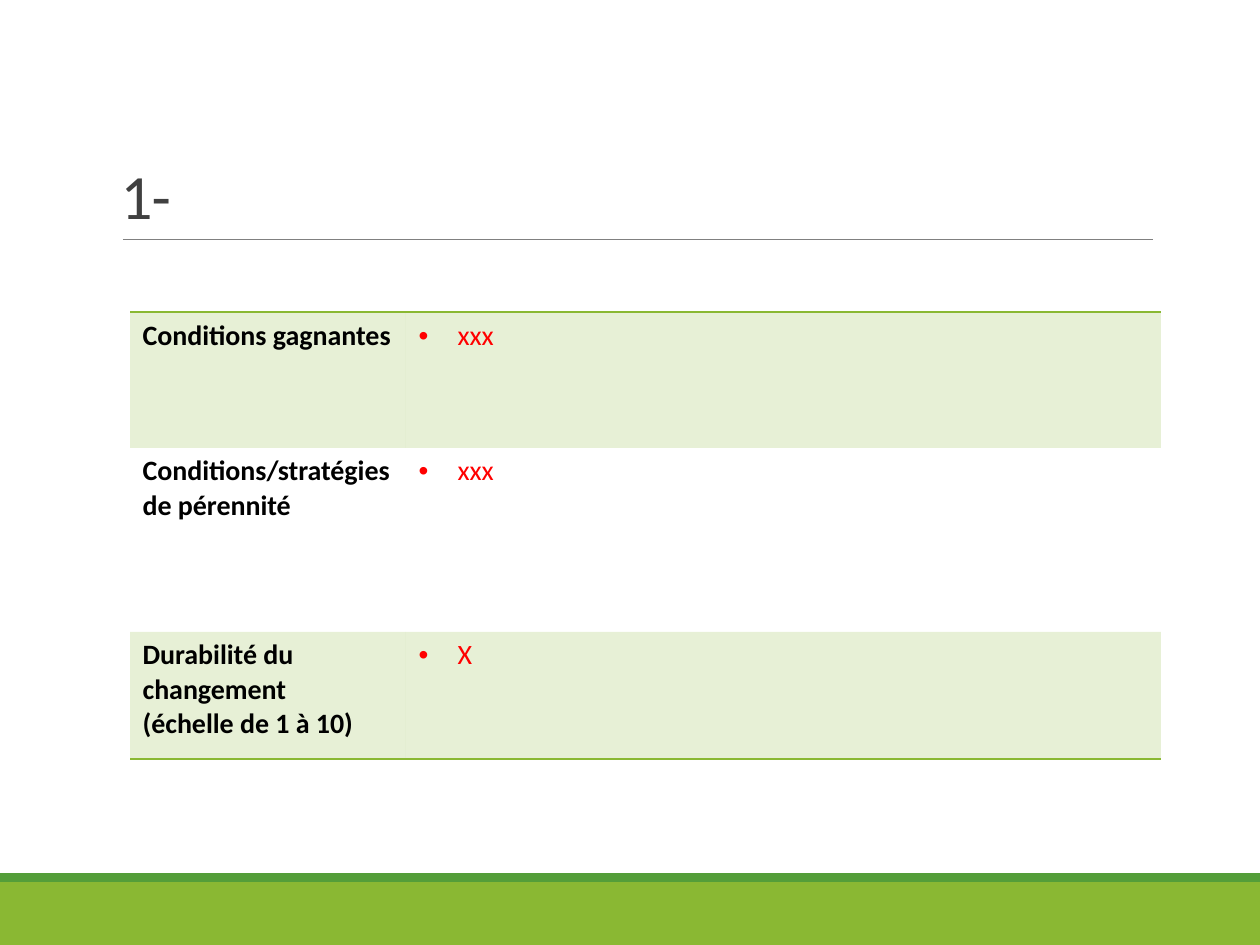
import pptx
import pptx.dml.color
import pptx.enum.shapes
import pptx.enum.text
import pptx.oxml
import pptx.oxml.ns
import pptx.util
from lxml import etree

PX = 914400 / 126
COLORS = {"green": "8AB833", "dark": "549E39", "rule": "808080",
          "title": "404040", "label": "000000", "answer": "FF0000"}
NO_STYLE = "{2D5ABB26-0587-4C30-8999-92F81FD0307C}"
A = pptx.oxml.ns.nsdecls("a")
qn = pptx.oxml.ns.qn


def px(*lengths):
    return [pptx.util.Emu(round(n * PX)) for n in lengths]


def write(tf, text, size=16, color="label", bold=False, bullet=False):
    p = tf.paragraphs[0]
    p.text = text
    for r in p.runs:
        r.font.name = "Calibri"
        r.font.size = pptx.util.Pt(size)
        r.font.bold = bold
        r.font.color.rgb = pptx.dml.color.RGBColor.from_string(COLORS[color])
    if bullet:
        pPr = p._p.get_or_add_pPr()
        indent = px(39)[0]
        pPr.set("marL", str(indent))
        pPr.set("indent", str(-indent))
        etree.SubElement(pPr, qn("a:buFont")).set("typeface", "Arial")
        etree.SubElement(pPr, qn("a:buChar")).set("char", "•")
    return p


prs = pptx.Presentation()
prs.slide_width, prs.slide_height = px(1260, 945)
s = prs.slides.add_slide(prs.slide_layouts[5])

# Footer bands
for top, height, color in [(882, 63, "green"), (873, 9, "dark")]:
    sp = s.shapes.add_shape(pptx.enum.shapes.MSO_SHAPE.RECTANGLE, *px(0, top, 1260, height))
    sp.shadow.inherit = False
    sp.fill.solid()
    sp.fill.fore_color.rgb = pptx.dml.color.RGBColor.from_string(COLORS[color])
    sp.line.fill.background()

# Title and its rule
rule = s.shapes.add_connector(pptx.enum.shapes.MSO_CONNECTOR.STRAIGHT, *px(123, 239, 1153, 239))
rule.line.color.rgb = pptx.dml.color.RGBColor.from_string(COLORS["rule"])
rule.line.width = pptx.util.Pt(0.5)
etree.SubElement(rule._element.spPr, qn("a:effectLst"))

title = s.shapes.title
title.left, title.top, title.width, title.height = px(108, 0, 1029, 239)
tf = title.text_frame
tf.word_wrap = True
tf.vertical_anchor = pptx.enum.text.MSO_ANCHOR.BOTTOM
p = write(tf, "1-", size=36, color="title")
p.alignment = pptx.enum.text.PP_ALIGN.LEFT
p.line_spacing = 0.85
p.runs[0].font._element.set("spc", "-50")

# Table: label and answer per row, shaded on every other row
rows = [("Conditions gagnantes", "xxx", 136),
        ("Conditions/stratégies de pérennité", "xxx", 184),
        ("Durabilité du changement \v(échelle de 1 à 10)", "X", 127)]
table = s.shapes.add_table(len(rows), 2, *px(130, 312, 1031, 447)).table
table.first_row = table.horz_banding = False
table._tbl.tblPr.find(qn("a:tableStyleId")).text = NO_STYLE
for column, width in zip(table.columns, px(276, 755)):
    column.width = width

edges = {0: "lnT", len(rows) - 1: "lnB"}
for i, (label, answer, height) in enumerate(rows):
    table.rows[i].height = px(height)[0]
    write(table.cell(i, 0).text_frame, label, bold=True)
    write(table.cell(i, 1).text_frame, answer, color="answer", bullet=True)
    for cell in table.rows[i].cells:
        if i % 2:
            cell.fill.background()
        else:
            cell.fill.solid()
            cell.fill.fore_color.rgb = pptx.dml.color.RGBColor.from_string(COLORS["green"])
            tint = cell._tc.tcPr.find(".//" + qn("a:srgbClr"))
            etree.SubElement(tint, qn("a:alpha")).set("val", "20000")
        if i in edges:
            cell._tc.tcPr.insert(0, pptx.oxml.parse_xml(
                f'<a:{edges[i]} {A} w="12700"><a:solidFill>'
                f'<a:srgbClr val="{COLORS["green"]}"/></a:solidFill></a:{edges[i]}>'))

prs.save("out.pptx")
